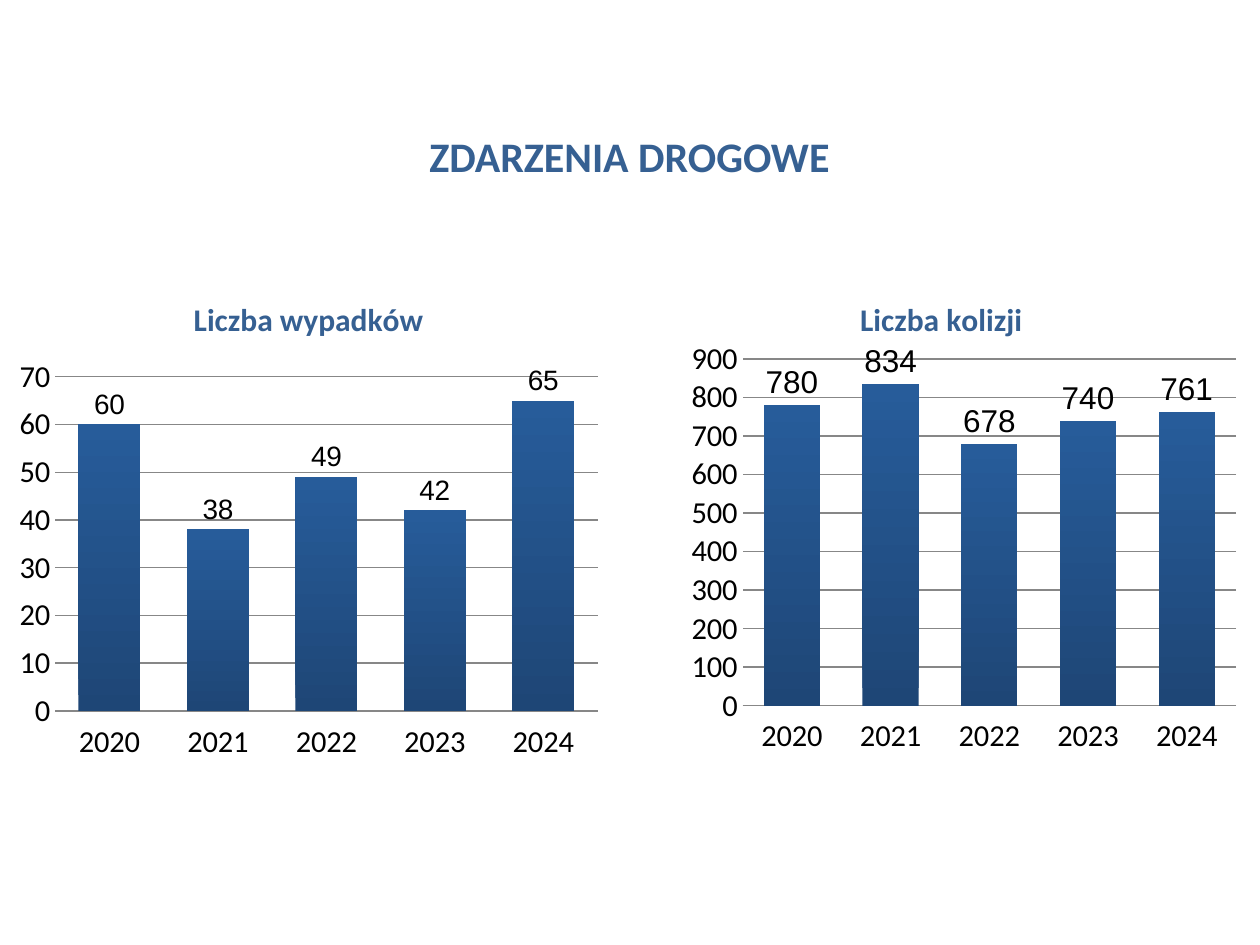
"""Build a slide with two column charts of road accidents and collisions."""
from lxml import etree
from pptx import Presentation
from pptx import util as u
from pptx.chart.data import CategoryChartData
from pptx.dml.color import RGBColor
from pptx.enum import chart as charts, text
from pptx.oxml.ns import qn

Pt = u.Pt
BLUE, GREY, BLACK = "366092", "878787", "000000"
YEARS = ["2020", "2021", "2022", "2023", "2024"]


def style_font(font, name, size, color, bold=False):
    font.name, font.size, font.bold = name, Pt(size), bold
    font.color.rgb = RGBColor.from_string(color)


def set_inner_plot(chart, **box):
    plot_area = chart.plots[0]._element.getparent()
    for old in plot_area.findall(qn("c:layout")):
        plot_area.remove(old)
    layout = etree.Element(qn("c:layout"))
    manual = etree.SubElement(layout, qn("c:manualLayout"))
    values = {"layoutTarget": "inner", "xMode": "edge", "yMode": "edge", **box}
    for tag, value in values.items():
        etree.SubElement(manual, qn(f"c:{tag}")).set("val", str(value))
    plot_area.insert(0, layout)


presentation = Presentation()
presentation.slide_width, presentation.slide_height = Pt(720), Pt(540)
slide = presentation.slides.add_slide(presentation.slide_layouts[6])

heading = slide.shapes.add_textbox(Pt(36.7), Pt(71.3), Pt(646), Pt(36)).text_frame
heading.word_wrap = True
heading.auto_size = text.MSO_AUTO_SIZE.SHAPE_TO_FIT_TEXT
paragraph = heading.paragraphs[0]
paragraph.text = "ZDARZENIA DROGOWE"
paragraph.alignment = text.PP_ALIGN.CENTER
style_font(paragraph.font, "Calibri", 24, BLUE, True)

for title, left, counts, label_size, plot_box in [
    ("Liczba wypadków", 4.3, [60, 38, 49, 42, 65], 16, None),
    ("Liczba kolizji", 365.8, [780, 834, 678, 740, 761], 18,
     {"x": 0.17, "y": 0.17, "w": 0.82, "h": 0.7}),
]:
    data = CategoryChartData(number_format="General")
    data.categories = YEARS
    data.add_series(title, counts)
    chart = slide.shapes.add_chart(
        charts.XL_CHART_TYPE.COLUMN_CLUSTERED,
        Pt(left), Pt(157), Pt(344), Pt(283), data).chart
    style_font(chart.font, "Arial", 10, BLACK)
    chart.has_legend = False
    chart.has_title = True
    title_paragraph = chart.chart_title.text_frame.paragraphs[0]
    title_paragraph.text = title
    style_font(title_paragraph.font, "Calibri", 18, BLUE, True)
    chart.chart_title.include_in_layout = False

    for axis in (chart.category_axis, chart.value_axis):
        axis.major_tick_mark = axis.minor_tick_mark = charts.XL_TICK_MARK.NONE
        style_font(axis.tick_labels.font, "Calibri", 17.4, BLACK)
    chart.category_axis.tick_label_position = charts.XL_TICK_LABEL_POSITION.LOW
    chart.value_axis.minimum_scale = 0
    chart.value_axis.format.line.fill.background()
    for line in (chart.category_axis.format.line,
                 chart.value_axis.major_gridlines.format.line):
        line.color.rgb = RGBColor.from_string(GREY)
        line.width = Pt(0.75)

    plot = chart.plots[0]
    plot.gap_width, plot.overlap, plot.vary_by_categories = 75, -25, False
    series = plot.series[0]
    fill = series.format.fill
    fill.gradient()
    fill.gradient_angle = 90
    for stop, color, position in zip(fill.gradient_stops, ("1E4676", "275C9A"), (0, 1)):
        stop.color.rgb = RGBColor.from_string(color)
        stop.position = position
    labels = series.data_labels
    labels.show_value = True
    labels.position = charts.XL_LABEL_POSITION.OUTSIDE_END
    style_font(labels.font, "Arial", label_size, BLACK)
    if plot_box:
        set_inner_plot(chart, **plot_box)

presentation.save("out.pptx")
